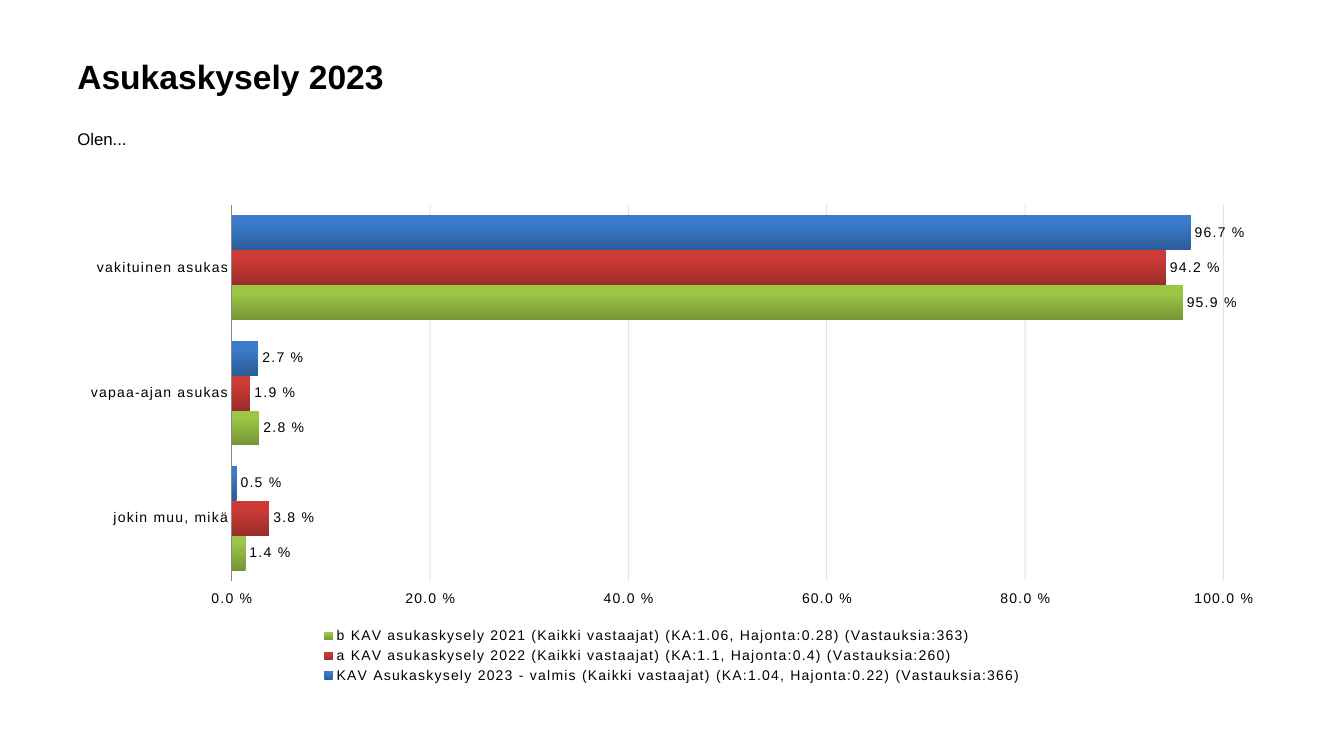
import dataclasses
import typing

import lxml.etree
import pptx
import pptx.chart.data
import pptx.dml.color
import pptx.enum.chart
import pptx.enum.text
import pptx.oxml
import pptx.oxml.ns
import pptx.util

Pt = pptx.util.Pt
RGB = pptx.dml.color.RGBColor
qn = pptx.oxml.ns.qn
BLACK = RGB(0x00, 0x00, 0x00)
GREY = RGB(0x86, 0x86, 0x86)
GRID = RGB(0x4F, 0x81, 0xBD)
BLUE = RGB(0x3A, 0x7C, 0xCB)
NAVY = RGB(0x2C, 0x5D, 0x98)
RED = RGB(0xCE, 0x3B, 0x37)
WINE = RGB(0x9B, 0x2D, 0x2A)
LIME = RGB(0x9C, 0xC7, 0x46)
MOSS = RGB(0x76, 0x95, 0x35)
LEFT = Pt(48)
WIDTH = Pt(864)
FORMAT = "0.0\\ %"


@dataclasses.dataclass(frozen=True)
class Survey:
    name: str
    shares: tuple[float, ...]
    dark: RGB
    light: RGB


GROUPS = ("vakituinen asukas", "vapaa-ajan asukas", "jokin muu, mikä")
SURVEYS = (
    Survey("KAV Asukaskysely 2023 - valmis (Kaikki vastaajat) (KA:1.04, Hajonta:0.22) (Vastauksia:366)",
           (0.967, 0.027, 0.005), NAVY, BLUE),
    Survey("a KAV asukaskysely 2022 (Kaikki vastaajat) (KA:1.1, Hajonta:0.4) (Vastauksia:260)",
           (0.942, 0.019, 0.038), WINE, RED),
    Survey("b KAV asukaskysely 2021 (Kaikki vastaajat) (KA:1.06, Hajonta:0.28) (Vastauksia:363)",
           (0.959, 0.028, 0.014), MOSS, LIME),
)


def style(font: typing.Any, size: float, bold: bool = False) -> None:
    font.name = "Arial"
    font.size = Pt(size)
    font.bold = bold
    font.color.rgb = BLACK


def write(shape: typing.Any, text: str, top: float, height: float, size: float, bold: bool) -> None:
    shape.left, shape.top = LEFT, Pt(top)
    shape.width, shape.height = WIDTH, Pt(height)
    shape.text_frame.text = text
    line = shape.text_frame.paragraphs[0]
    line.alignment = pptx.enum.text.PP_ALIGN.LEFT
    style(line.runs[0].font, size, bold)


def add_bars(slide: typing.Any) -> typing.Any:
    data = pptx.chart.data.CategoryChartData(number_format=FORMAT)
    data.categories = GROUPS
    for survey in SURVEYS:
        data.add_series(survey.name, survey.shares)
    kind = pptx.enum.chart.XL_CHART_TYPE.BAR_CLUSTERED
    return slide.shapes.add_chart(kind, LEFT, Pt(139.7), WIDTH, Pt(351.4), data).chart


def paint(chart: typing.Any) -> None:
    plot = chart.plots[0]
    plot.gap_width = 58
    plot.overlap = 0
    plot.vary_by_categories = False
    for bars, survey in zip(plot.series, SURVEYS):
        fill = bars.format.fill
        fill.gradient()
        fill.gradient_angle = 90
        for stop, color, place in zip(fill.gradient_stops, (survey.dark, survey.light), (0, 0.8)):
            stop.color.rgb = color
            stop.position = place
        bars.format.line.fill.background()
        bars.invert_if_negative = False
        labels = bars.data_labels
        labels.show_value = True
        labels.number_format = FORMAT
        labels.number_format_is_linked = False
        labels.position = pptx.enum.chart.XL_LABEL_POSITION.OUTSIDE_END
        style(labels.font, 10)


def set_axes(chart: typing.Any) -> None:
    names, scale = chart.category_axis, chart.value_axis
    for axis in (names, scale):
        axis.major_tick_mark = pptx.enum.chart.XL_TICK_MARK.NONE
        axis.minor_tick_mark = pptx.enum.chart.XL_TICK_MARK.NONE
        style(axis.tick_labels.font, 10)
    names.reverse_order = True
    names.crosses = pptx.enum.chart.XL_AXIS_CROSSES.MAXIMUM
    names.format.line.color.rgb = GREY
    names.format.line.width = Pt(0.75)
    scale.minimum_scale, scale.maximum_scale = 0, 1
    scale.major_unit = 0.2
    scale.tick_label_position = pptx.enum.chart.XL_TICK_LABEL_POSITION.HIGH
    scale.tick_labels.number_format = FORMAT
    scale.tick_labels.number_format_is_linked = False
    scale.format.line.fill.background()
    scale.has_major_gridlines = True
    line = scale.major_gridlines.format.line
    line.color.rgb = GRID
    line.width = Pt(0.75)
    tint = next(line.fill._xPr.iter(qn("a:srgbClr")))
    lxml.etree.SubElement(tint, qn("a:alpha")).set("val", "20000")


def set_frame(chart: typing.Any) -> None:
    area = chart._chartSpace.chart.plotArea
    for old in area.findall(qn("c:layout")):
        area.remove(old)
    layout = lxml.etree.Element(qn("c:layout"))
    area.insert(0, layout)
    manual = lxml.etree.SubElement(layout, qn("c:manualLayout"))
    parts = (("layoutTarget", "inner"), ("xMode", "edge"), ("yMode", "edge"),
             ("x", "0.136"), ("y", "0.02"), ("w", "0.82"), ("h", "0.763"))
    for tag, val in parts:
        lxml.etree.SubElement(manual, qn("c:" + tag)).set("val", val)


def main() -> None:
    deck = pptx.Presentation()
    deck.slide_width, deck.slide_height = Pt(960), Pt(540)
    slide = deck.slides.add_slide(deck.slide_layouts[1])
    title, body = slide.placeholders
    write(title, "Asukaskysely 2023", 26, 57, 24, True)
    title.text_frame.vertical_anchor = pptx.enum.text.MSO_ANCHOR.MIDDLE
    write(body, "Olen...", 88.5, 42.5, 12, False)
    line = body.text_frame.paragraphs[0]
    line.space_before = Pt(2.4)
    props = line._p.get_or_add_pPr()
    props.set("marL", "0")
    props.set("indent", "0")
    lxml.etree.SubElement(props, qn("a:buNone"))

    chart = add_bars(slide)
    chart.has_title = False
    style(chart.font, 10)
    chart.font.name = "Calibri"
    paint(chart)
    set_axes(chart)
    set_frame(chart)
    chart.has_legend = True
    chart.legend.position = pptx.enum.chart.XL_LEGEND_POSITION.BOTTOM
    chart.legend.include_in_layout = False
    style(chart.legend.font, 10)
    for text in chart._chartSpace.iter(qn("a:defRPr")):
        text.set("spc", "100")
    deck.save("out.pptx")


if __name__ == "__main__":
    main()
